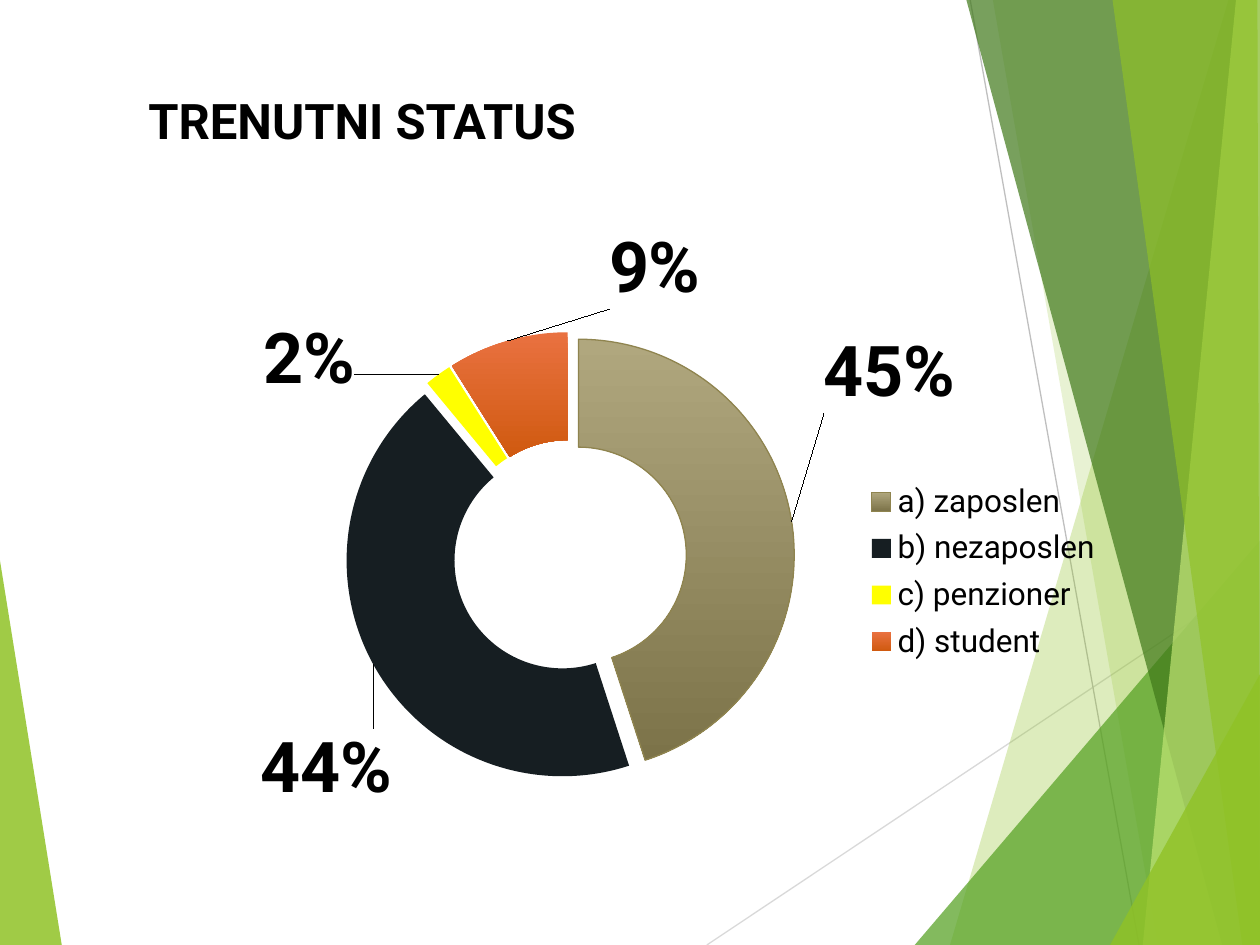
import lxml.etree
import pptx
import pptx.chart.data
import pptx.enum.chart
import pptx.oxml
import pptx.oxml.ns
import pptx.util
from pptx.util import Inches

FONT = "Roboto"
COLORS = {
    "text": "000000", "lime": "90C226", "green": "54A021", "forest": "3F7819",
    "pale": "C0E474", "light_line": "D9D9D9", "dark_line": "BFBFBF",
    "khaki_top": "B0A77E", "khaki_bottom": "7C7349", "khaki_edge": "8F844F",
    "ink": "161E22", "yellow": "FFFF00", "orange_top": "E97140", "orange_bottom": "D05A10",
}
FACETS = [
    ([(7.54, 7.5), (9.75, 0), (10, 0), (10, 7.5)], "lime", 30),
    ([(7.88, 0), (9.19, 7.5), (10, 7.5), (10, 0)], "lime", 20),
    ([(7.26, 7.5), (10, 4.29), (10, 7.5)], "green", 72),
    ([(7.67, 0), (9.7, 7.5), (10, 7.5), (10, 0)], "forest", 70),
    ([(9.81, 0), (9.07, 7.5), (10, 7.5), (10, 0)], "pale", 70),
    ([(8.83, 0), (9.86, 7.5), (10, 7.5), (9.98, 0)], "lime", 65),
    ([(8.81, 7.5), (10, 5.35), (10, 7.5)], "lime", 80),
]
STATUSES = [
    ("a) zaposlen", 0.45, ("khaki_top", "khaki_bottom"), (0.16, -0.24)),
    ("b) nezaposlen", 0.44, ("ink",), (-0.1, 0.2)),
    ("c) penzioner", 0.02, ("yellow",), (-0.17, -0.09)),
    ("d) student", 0.09, ("orange_top", "orange_bottom"), (0.14, -0.19)),
]


def rgb(name):
    """Return the named colour."""
    return pptx.dml.color.RGBColor.from_string(COLORS[name])


def style_font(font, size, bold=False):
    """Set the slide's typeface, size and weight on a font."""
    font.name, font.size, font.bold = FONT, pptx.util.Pt(size), bold
    font.color.rgb = rgb("text")


def add_facet(page, points, color, opacity):
    """Draw one translucent polygon from points in inches."""
    corners = [(Inches(x), Inches(y)) for x, y in points]
    builder = page.shapes.build_freeform(*corners[0])
    builder.add_line_segments(corners[1:], close=True)
    shape = builder.convert_to_shape()
    shape.shadow.inherit = False
    shape.line.fill.background()
    shape.fill.solid()
    shape.fill.fore_color.rgb = rgb(color)
    tint = shape._element.spPr.find(".//" + pptx.oxml.ns.qn("a:srgbClr"))
    lxml.etree.SubElement(tint, pptx.oxml.ns.qn("a:alpha"), val=str(opacity * 1000))


def add_thin_line(page, start, end, color):
    """Draw one decorative hairline."""
    ends = [Inches(value) for value in (*start, *end)]
    line = page.shapes.add_connector(pptx.enum.shapes.MSO_CONNECTOR.STRAIGHT, *ends)
    line.line.color.rgb = rgb(color)
    line.line.width = pptx.util.Pt(0.75)
    lxml.etree.SubElement(line._element.spPr, pptx.oxml.ns.qn("a:effectLst"))


def add_backdrop(page):
    """Draw the green facets and hairlines at the page edges."""
    add_facet(page, [(0, 4.45), (0.49, 7.5), (0, 7.5)], "lime", 85)
    add_thin_line(page, (5.61, 7.5), (10, 4.57), "light_line")
    add_thin_line(page, (7.7, 0), (9.04, 7.5), "dark_line")
    for points, color, opacity in FACETS:
        add_facet(page, points, color, opacity)


def add_title(page, left, top, width, height):
    """Place the heading in the given box."""
    box = page.shapes.add_textbox(left, top, width, height)
    box.text_frame.word_wrap = True
    para = box.text_frame.paragraphs[0]
    para.text = "TRENUTNI STATUS"
    style_font(para.font, 28, True)


def make_layout(x, y, width=None, height=None, inner=False):
    """Return a manual chart layout given in fractions of the chart."""
    parts = '<c:layoutTarget val="inner"/>' if inner else ""
    if width:
        parts += '<c:xMode val="edge"/><c:yMode val="edge"/>'
    sizes = zip("xywh", (x, y, width, height))
    parts += "".join(f'<c:{key} val="{value}"/>' for key, value in sizes if value is not None)
    return pptx.oxml.parse_xml(
        f'<c:layout {pptx.oxml.ns.nsdecls("c")}><c:manualLayout>{parts}</c:manualLayout></c:layout>')


def set_layout(parent, layout, after=None):
    """Replace the layout of a chart part, after the named child or first."""
    for old in parent.findall(pptx.oxml.ns.qn("c:layout")):
        parent.remove(old)
    if after:
        parent.find(pptx.oxml.ns.qn(after)).addnext(layout)
    else:
        parent.insert(0, layout)


def style_slice(point, colors, offset):
    """Fill one ring slice and move its label."""
    fill = point.format.fill
    if len(colors) == 2:
        fill.gradient()
        fill.gradient_angle = 270
        for stop, color, position in zip(fill.gradient_stops, colors, (0, 1)):
            stop.color.rgb = rgb(color)
            stop.position = position
    else:
        fill.solid()
        fill.fore_color.rgb = rgb(colors[0])
    point.format.line.fill.background()
    style_font(point.data_label.font, 40, True)
    label = point.data_label._dLbl
    set_layout(label, make_layout(*offset), "c:idx")


def add_status_chart(page, left, top, width, height):
    """Place the ring chart of statuses in the given box."""
    data = pptx.chart.data.CategoryChartData(number_format="0%")
    data.categories = [status[0] for status in STATUSES]
    data.add_series("Series 1", [status[1] for status in STATUSES])
    kind = pptx.enum.chart.XL_CHART_TYPE.DOUGHNUT_EXPLODED
    chart = page.shapes.add_chart(kind, left, top, width, height, data).chart
    style_font(chart.font, 18)
    chart.has_title = False
    chart.has_legend = True
    chart.legend.position = pptx.enum.chart.XL_LEGEND_POSITION.RIGHT
    chart.legend.include_in_layout = False
    style_font(chart.legend.font, 18)
    set_layout(chart.legend._element, make_layout(0.705, 0.42, 0.25, 0.3), "c:legendPos")
    plot_area = chart._chartSpace.chart.plotArea
    set_layout(plot_area, make_layout(0.155, 0.19, 0.475, 0.713, inner=True))
    plot_area.find(".//" + pptx.oxml.ns.qn("c:explosion")).set("val", "8")
    plot_area.find(".//" + pptx.oxml.ns.qn("c:holeSize")).set("val", "50")
    series = chart.plots[0].series[0]
    labels = series.data_labels
    labels.show_value = True
    labels.number_format, labels.number_format_is_linked = "0%", False
    style_font(labels.font, 40, True)
    for index, (_, _, colors, offset) in enumerate(STATUSES):
        style_slice(series.points[index], colors, offset)
    edge = series.points[0].format.line
    edge.color.rgb = rgb("khaki_edge")
    edge.width = pptx.util.Pt(0.75)


def main():
    """Build and save the slide."""
    deck = pptx.Presentation()
    deck.slide_width, deck.slide_height = Inches(10), Inches(7.5)
    page = deck.slides.add_slide(deck.slide_layouts[6])
    add_backdrop(page)
    add_status_chart(page, Inches(1.58), Inches(1.58), Inches(7.5), Inches(5.19))
    add_title(page, Inches(1.08), Inches(0.67), Inches(8.5), Inches(0.57))
    deck.save("out.pptx")


if __name__ == "__main__":
    main()
